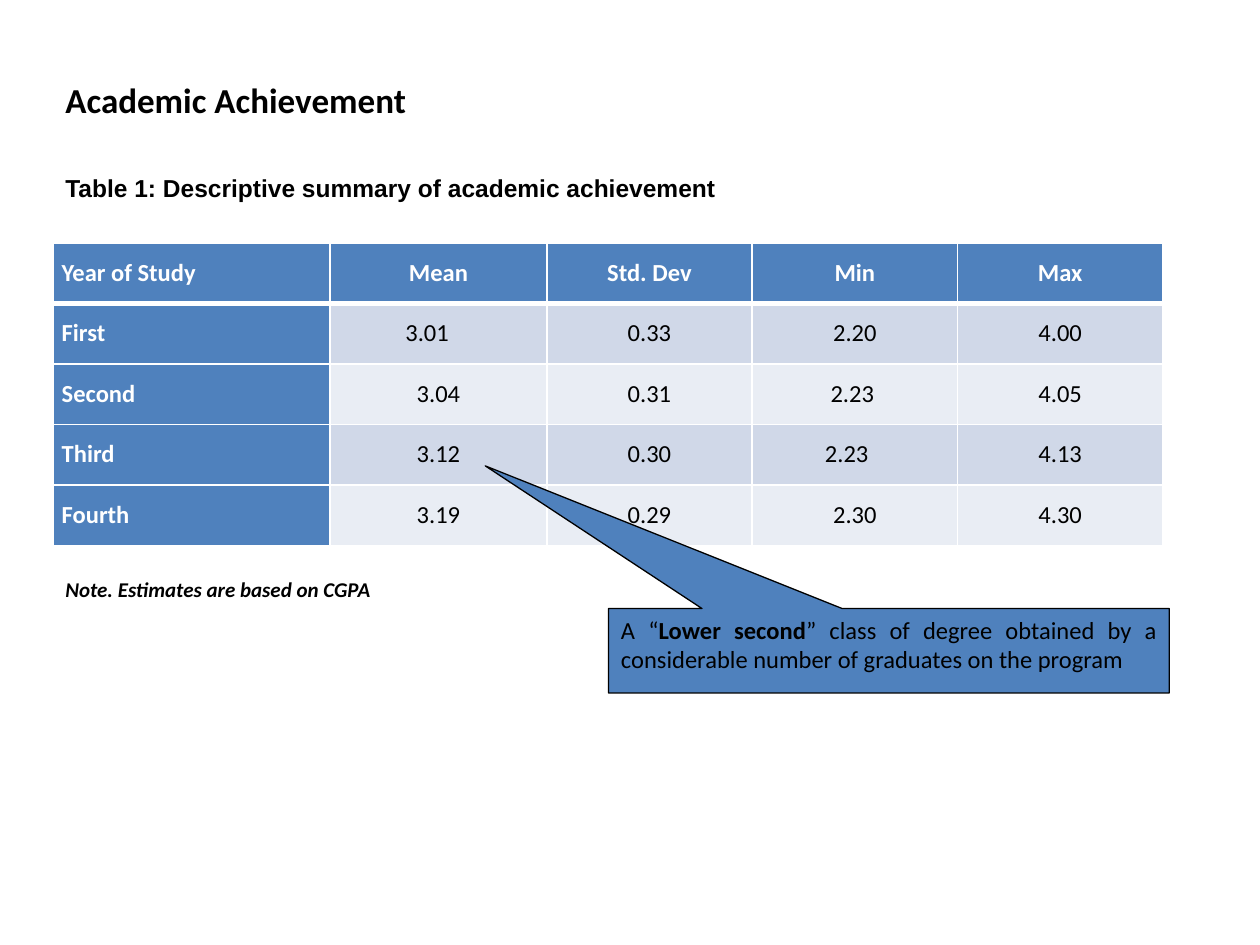
"""Build the academic achievement slide with its summary table and callout."""
from dataclasses import dataclass

from lxml import etree
from pptx import Presentation
from pptx import util as u
from pptx.dml.color import RGBColor
from pptx.enum import shapes, text
from pptx.oxml.ns import qn

COLORS = {
    "white": "FFFFFF",
    "black": "000000",
    "blue": "4F81BD",
    "dark_band": "D0D8E8",
    "light_band": "E9EDF4",
}
ALIGN = text.PP_ALIGN
COLUMN_WIDTHS = [2.2, 1.72, 1.63, 1.63, 1.63]
ROW_HEIGHT = 0.48
ROWS = [
    ["Year of Study", "Mean", "Std. Dev", "Min", "Max"],
    ["First", "3.01", "0.33", "2.20", "4.00"],
    ["Second", "3.04", "0.31", "2.23", "4.05"],
    ["Third", "3.12", "0.30", "2.23", "4.13"],
    ["Fourth", "3.19", "0.29", "2.30", "4.30"],
]
CELL_MARGIN = 0.07
RIGHT_INDENTS = {(1, 1): 0.18, (2, 3): 0.04, (3, 3): 0.13}


@dataclass
class Label:
    words: str
    left: float
    top: float
    width: float
    height: float
    size: int
    font: str = "Calibri"
    italic: bool = False
    wrap: bool = True
    align: ALIGN = ALIGN.JUSTIFY
    anchor: text.MSO_ANCHOR = text.MSO_ANCHOR.TOP


LABELS = [
    Label("Academic Achievement", 0.42, 0.57, 8.5, 0.44, 20),
    Label("Table 1: Descriptive summary of academic achievement", 0.42, 1.32, 8.83, 0.34,
          14, font="Arial", anchor=text.MSO_ANCHOR.MIDDLE),
    Label("Note. Estimates are based on CGPA", 0.42, 4.53, 2.66, 0.3, 12,
          italic=True, wrap=False, align=ALIGN.LEFT),
]


def rgb(name: str) -> RGBColor:
    return RGBColor.from_string(COLORS[name])


def add_span(para, words: str, *, size: int = 14, font: str = "Calibri",
             color: str = "black", bold: bool = False, italic: bool = False) -> None:
    span = para.add_run()
    span.text = words
    span.font.size = u.Pt(size)
    span.font.name = font
    span.font.bold = bold
    span.font.italic = italic
    span.font.color.rgb = rgb(color)


def add_label(page, label: Label) -> None:
    box = page.shapes.add_textbox(u.Inches(label.left), u.Inches(label.top),
                                  u.Inches(label.width), u.Inches(label.height))
    frame = box.text_frame
    frame.word_wrap = label.wrap
    frame.auto_size = text.MSO_AUTO_SIZE.SHAPE_TO_FIT_TEXT
    frame.vertical_anchor = label.anchor
    para = frame.paragraphs[0]
    para.alignment = label.align
    add_span(para, label.words, size=label.size, font=label.font,
             bold=True, italic=label.italic)


def set_borders(cell, widths: dict[str, float]) -> None:
    properties = cell._tc.get_or_add_tcPr()
    for position, (side, width) in enumerate(widths.items()):
        line = etree.Element(qn(f"a:ln{side}"), w=str(u.Pt(width)))
        fill = etree.SubElement(line, qn("a:solidFill"))
        etree.SubElement(fill, qn("a:srgbClr"), val=COLORS["white"])
        properties.insert(position, line)


def fill_cell(cell, words: str, row: int, column: int) -> None:
    heading = row == 0 or column == 0
    band = "dark_band" if row % 2 else "light_band"
    cell.fill.solid()
    cell.fill.fore_color.rgb = rgb("blue" if heading else band)
    cell.margin_top = cell.margin_bottom = 0
    cell.margin_left = u.Inches(CELL_MARGIN)
    cell.margin_right = u.Inches(CELL_MARGIN + RIGHT_INDENTS.get((row, column), 0))
    para = cell.text_frame.paragraphs[0]
    para.alignment = ALIGN.CENTER if column else ALIGN.LEFT
    para.line_spacing = 1.5
    add_span(para, words, color="white" if heading else "black", bold=heading)
    set_borders(cell, {"L": 1, "R": 1, "T": 3 if row == 1 else 1, "B": 1 if row else 3})


def add_summary_table(page) -> None:
    frame = page.shapes.add_table(len(ROWS), len(COLUMN_WIDTHS), u.Inches(0.42), u.Inches(1.93),
                                  u.Inches(sum(COLUMN_WIDTHS)), u.Inches(ROW_HEIGHT * len(ROWS)))
    table = frame.table
    for column, width in zip(table.columns, COLUMN_WIDTHS):
        column.width = u.Inches(width)
    for row, values in enumerate(ROWS):
        table.rows[row].height = u.Inches(ROW_HEIGHT)
        for column, words in enumerate(values):
            fill_cell(table.cell(row, column), words, row, column)


def add_callout(page) -> None:
    callout = page.shapes.add_shape(shapes.MSO_SHAPE.RECTANGULAR_CALLOUT, u.Inches(4.83),
                                    u.Inches(4.83), u.Inches(4.45), u.Inches(0.67))
    callout.adjustments[0] = -0.72
    callout.adjustments[1] = -2.19
    callout.shadow.inherit = False
    callout.fill.solid()
    callout.fill.fore_color.rgb = rgb("blue")
    callout.line.color.rgb = rgb("black")
    callout.line.width = u.Pt(0.75)
    frame = callout.text_frame
    frame.word_wrap = True
    frame.vertical_anchor = text.MSO_ANCHOR.TOP
    para = frame.paragraphs[0]
    para.alignment = ALIGN.JUSTIFY
    add_span(para, "A “")
    add_span(para, "Lower second", bold=True)
    add_span(para, "” class of degree obtained by a considerable number of graduates on the program")


def main() -> None:
    deck = Presentation()
    deck.slide_width = u.Inches(10)
    deck.slide_height = u.Inches(7.5)
    page = deck.slides.add_slide(deck.slide_layouts[6])
    title, caption, note = LABELS
    add_label(page, title)
    add_summary_table(page)
    add_label(page, caption)
    add_callout(page)
    add_label(page, note)
    deck.save("out.pptx")


if __name__ == "__main__":
    main()
